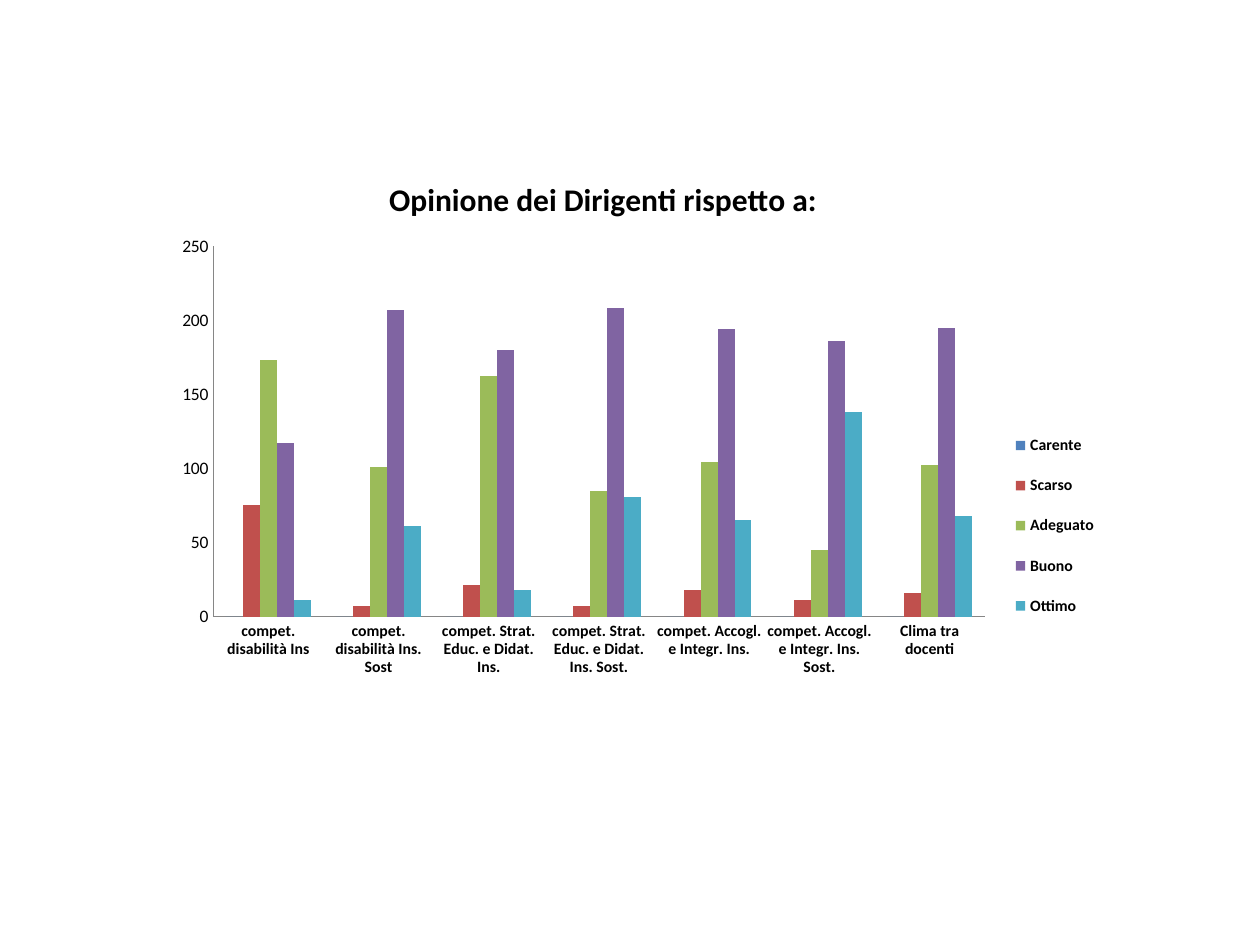
from dataclasses import dataclass

from lxml import etree
from pptx import Presentation
from pptx import util as u
from pptx.chart.data import CategoryChartData
from pptx.dml.color import RGBColor
from pptx.enum import chart as ch
from pptx.oxml.ns import qn


@dataclass(frozen=True)
class Theme:
    """Colours, font and type sizes of the slide."""
    font: str = "Calibri"
    ink: str = "000000"
    rule: str = "868686"
    fills: tuple = ("4F81BD", "C0504D", "9BBB59", "8064A2", "4BACC6")
    head: int = 18
    body: int = 10
    label: int = 9


CATS = ["compet. disabilità Ins", "compet. disabilità Ins. Sost",
        "compet. Strat. Educ. e Didat. Ins.",
        "compet. Strat. Educ. e Didat. Ins. Sost.",
        "compet. Accogl. e Integr. Ins.",
        "compet. Accogl. e Integr. Ins. Sost.", "Clima tra docenti"]
VOTES = {
    "Carente": [0, 0, 0, 0, 0, 0, 0],
    "Scarso": [75, 7, 21, 7, 18, 11, 16],
    "Adeguato": [173, 101, 162, 85, 104, 45, 102],
    "Buono": [117, 207, 180, 208, 194, 186, 195],
    "Ottimo": [11, 61, 18, 81, 65, 138, 68],
}


def px(n):
    """Turn pixels into EMU at 126 px to the inch."""
    return u.Emu(round(n * 914400 / 126))


def style(font, theme, size, bold=False):
    """Apply the theme's face and ink to a font."""
    font.name, font.size, font.bold = theme.font, u.Pt(size), bold
    font.color.rgb = RGBColor.from_string(theme.ink)


def write(frame, words, theme, **form):
    """Put formatted text into a text frame."""
    run = frame.paragraphs[0].add_run()
    run.text = words
    style(run.font, theme, **form)


def place(node, index, inner=False, **spots):
    """Give a chart part a manual layout in shares of the chart."""
    for old in node.findall(qn("c:layout")):
        node.remove(old)
    outer = etree.Element(qn("c:layout"))
    box = etree.SubElement(outer, qn("c:manualLayout"))
    pairs = [("layoutTarget", "inner")] if inner else []
    pairs += [("xMode", "edge"), ("yMode", "edge"), *spots.items()]
    for tag, val in pairs:
        etree.SubElement(box, qn("c:" + tag)).set("val", str(val))
    node.insert(index, outer)


class Deck:
    """Hold the style and the current slide."""

    def __init__(self, theme):
        """Open a deck with one blank slide."""
        self.theme = theme
        self.prs = Presentation()
        self.prs.slide_width, self.prs.slide_height = px(1260), px(945)
        self.slide = self.prs.slides.add_slide(self.prs.slide_layouts[6])

    def columns(self, cats, rows, left, top, wide, high):
        """Add a clustered column chart and return it."""
        data = CategoryChartData()
        data.categories = cats
        for name, vals in rows.items():
            data.add_series(name, vals)
        chart = self.slide.shapes.add_chart(
            ch.XL_CHART_TYPE.COLUMN_CLUSTERED,
            px(left), px(top), px(wide), px(high), data).chart
        style(chart.font, self.theme, self.theme.body)
        plot = chart.plots[0]
        plot.gap_width, plot.overlap, plot.vary_by_categories = 150, 0, False
        for bar, tint in zip(plot.series, self.theme.fills):
            bar.format.fill.solid()
            bar.format.fill.fore_color.rgb = RGBColor.from_string(tint)
        area = chart.plots[0]._element.getparent()
        place(area, 0, inner=True, x=0.09, y=0.15, w=0.77, h=0.55)
        return chart

    def axes(self, chart, top, step):
        """Style both axes and set the value scale."""
        for axis in (chart.category_axis, chart.value_axis):
            axis.has_major_gridlines = False
            axis.major_tick_mark = ch.XL_TICK_MARK.NONE
            axis.minor_tick_mark = ch.XL_TICK_MARK.NONE
            line = axis.format.line
            line.color.rgb = RGBColor.from_string(self.theme.rule)
            line.width = u.Pt(0.75)
        axis.minimum_scale, axis.maximum_scale, axis.major_unit = 0, top, step
        style(axis.tick_labels.font, self.theme, self.theme.body)
        style(chart.category_axis.tick_labels.font, self.theme,
              self.theme.label, bold=True)

    def title(self, chart, words):
        """Add the chart title."""
        chart.has_title = True
        title = chart.chart_title
        write(title.text_frame, words, self.theme,
              size=self.theme.head, bold=True)
        title.include_in_layout = False
        place(title._element, 1, x=0.26, y=0.04)

    def legend(self, chart):
        """Add the legend at the lower right."""
        chart.has_legend = True
        key = chart.legend
        key.position = ch.XL_LEGEND_POSITION.RIGHT
        key.include_in_layout = False
        style(key.font, self.theme, self.theme.label, bold=True)
        place(key._element, 1, x=0.87, y=0.4, w=0.12, h=0.33)


def main():
    """Build and save the slide."""
    deck = Deck(Theme())
    chart = deck.columns(CATS, VOTES, 123, 145, 1002, 674)
    deck.axes(chart, top=250, step=50)
    deck.title(chart, "Opinione dei Dirigenti rispetto a:")
    deck.legend(chart)
    deck.prs.save("out.pptx")


if __name__ == "__main__":
    main()
